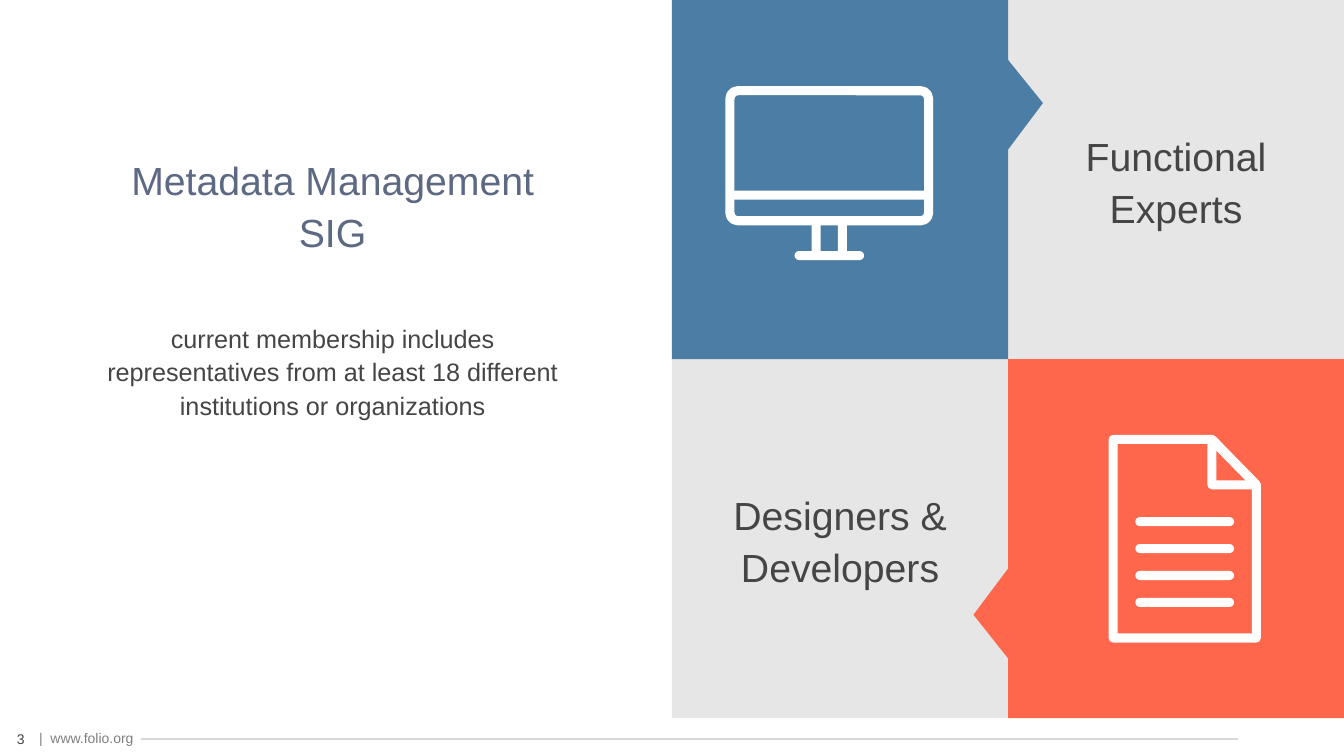
"""Build the Metadata Management SIG slide with its two-by-two tile grid."""
from lxml.etree import SubElement
from pptx import Presentation
from pptx.dml.color import RGBColor
from pptx.enum.shapes import MSO_CONNECTOR as Link, MSO_SHAPE as Kind
from pptx.enum.text import MSO_ANCHOR as Anchor, MSO_AUTO_SIZE as Auto, PP_ALIGN as Align
from pptx.oxml.ns import qn
from pptx.util import Inches, Pt

WIDE, HIGH = 13.33, 7.5
COL, ROW = WIDE / 4, HIGH * 0.475
BLUE, RED, GREY, WHITE = "4C7EA5", "FF674C", "E7E6E6", "FFFFFF"
INK, SLATE, MUTED, RULE = "454545", "5D6883", "7F7F7F", "D8D8D8"
FONT, BAR = "Arial", 0.09

TITLE = "Metadata Management SIG"
BODY = ("current membership includes representatives from at least 18 different "
        "institutions or organizations")
LABELS = [("Designers & Developers", 2, 1), ("Functional Experts", 3, 0)]
CALLS = [(3, 1, RED, -0.603, 0.212), (2, 0, BLUE, 0.604, -0.213)]
LEFT, SPAN = WIDE * 0.069, WIDE * 0.357
FOOT, BAND = HIGH * 0.959, HIGH * 0.036
FOOTERS = [("|  www.folio.org", 0.29, 1.94, MUTED, Align.LEFT, Anchor.TOP),
           ("3", 0, 0.41, INK, Align.CENTER, Anchor.MIDDLE)]

SCREEN = (7.24, 0.9, 1.97, 1.29)
STAND = [(7.2, 1.89, 2.05, BAR), (8.05, 2.15, BAR, 0.43),
         (8.31, 2.15, BAR, 0.43), (7.88, 2.49, 0.69, BAR)]
LINES = [(11.26, 5.13 + 0.267 * n, 0.98, BAR) for n in range(4)]
PAGE = [(11.04, 4.36), (12.02, 4.36), (12.46, 4.81), (12.46, 6.33), (11.04, 6.33)]
FOLD = [(12.02, 4.36), (12.46, 4.81), (12.02, 4.81)]


def tint(hue):
    return RGBColor.from_string(hue)


def box(at):
    return [Inches(v) for v in at]


def write(shape, text, size, hue, align=Align.CENTER, anchor=Anchor.MIDDLE, lead=1.1):
    frame = shape.text_frame
    frame.word_wrap, frame.auto_size = True, Auto.NONE
    frame.vertical_anchor = anchor
    para = frame.paragraphs[0]
    para.alignment, para.line_spacing = align, lead
    run = para.add_run()
    run.text = text
    run.font.name, run.font.size = FONT, Pt(size)
    run.font.color.rgb = tint(hue)


def block(kind, at, hue):
    shape = slide.shapes.add_shape(kind, *box(at))
    shape.shadow.inherit = False
    shape.fill.solid()
    shape.fill.fore_color.rgb = tint(hue)
    shape.line.fill.background()
    return shape


def stroke(shape):
    shape.shadow.inherit = False
    shape.fill.background()
    shape.line.color.rgb = tint(WHITE)
    shape.line.width = Inches(BAR)
    SubElement(shape.line._get_or_add_ln(), qn("a:round"))


def outline(points):
    first, *rest = [box(p) for p in points]
    pen = slide.shapes.build_freeform(*first)
    pen.add_line_segments(rest, close=True)
    stroke(pen.convert_to_shape())


deck = Presentation()
deck.slide_width, deck.slide_height = Inches(WIDE), Inches(HIGH)
slide = deck.slides.add_slide(deck.slide_layouts[5])

for text, left, wide, hue, align, anchor in FOOTERS:
    note = slide.shapes.add_textbox(*box((left, FOOT, wide, BAND)))
    write(note, text, 10, hue, align, anchor, 1)
rule = slide.shapes.add_connector(Link.STRAIGHT, *box((1.4, 7.33, 12.28, 7.33)))
rule.line.color.rgb, rule.line.width = tint(RULE), Pt(1)
SubElement(rule._element.spPr, qn("a:effectLst"))

head = slide.shapes.title
head.left, head.top, head.width, head.height = box((LEFT, 0.4, SPAN, 2.18))
write(head, TITLE, 28, SLATE, anchor=Anchor.BOTTOM)
body = slide.shapes.add_textbox(*box((LEFT, 3.13, SPAN, 1.64)))
write(body, BODY, 18, INK, anchor=Anchor.TOP)

for text, col, row in LABELS:
    tile = block(Kind.RECTANGLE, (col * COL, row * ROW, COL, ROW), GREY)
    write(tile, text, 28, INK)
for col, row, hue, across, down in CALLS:
    tile = block(Kind.RECTANGULAR_CALLOUT, (col * COL, row * ROW, COL, ROW), hue)
    tile.adjustments[0], tile.adjustments[1] = across, down

screen = slide.shapes.add_shape(Kind.ROUNDED_RECTANGLE, *box(SCREEN))
screen.adjustments[0] = 0.06
stroke(screen)
for points in (PAGE, FOLD):
    outline(points)
for at in STAND + LINES:
    block(Kind.ROUNDED_RECTANGLE, at, WHITE).adjustments[0] = 0.5

deck.save("out.pptx")
